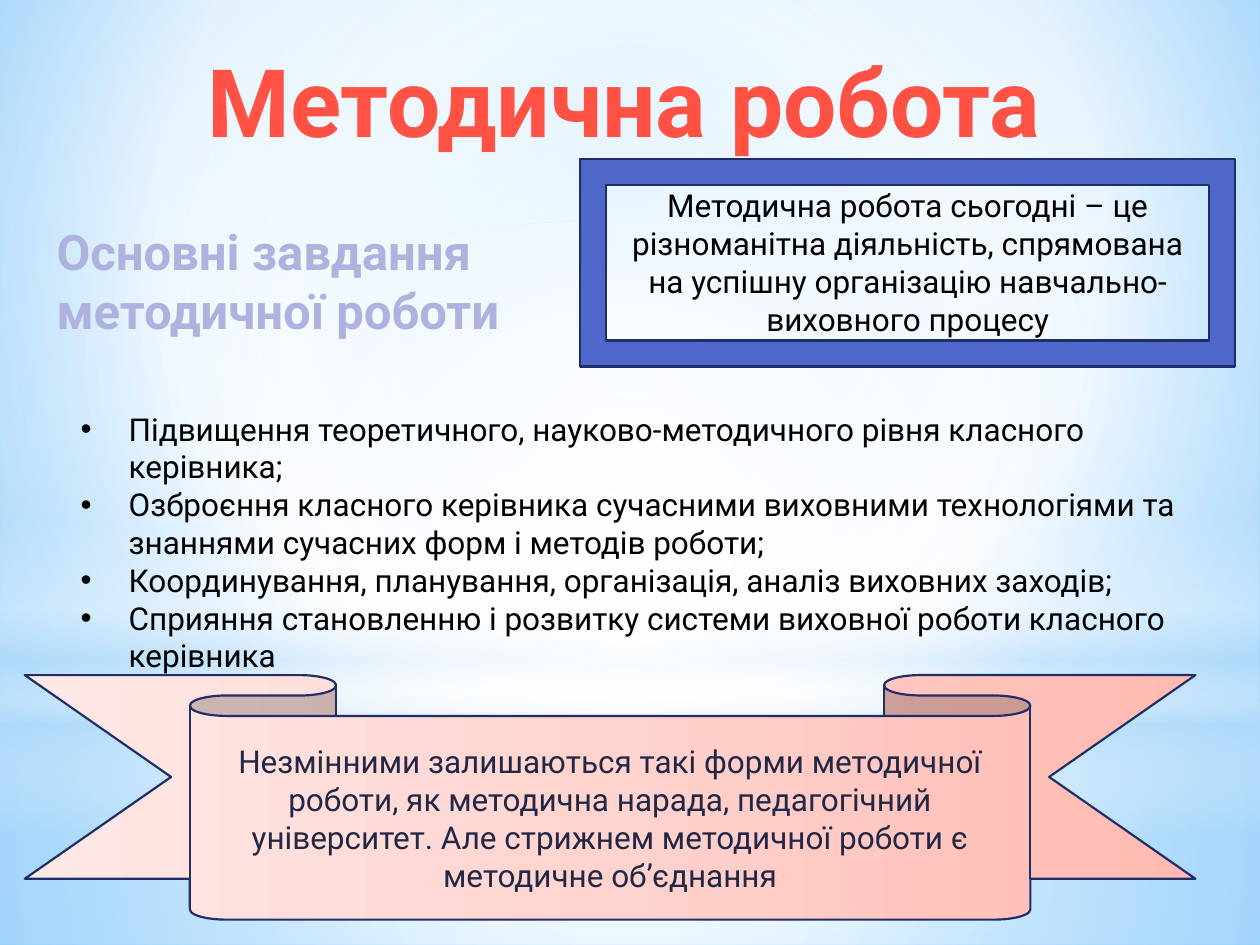
import pptx
import pptx.dml.color
import pptx.enum.shapes
import pptx.enum.text
import pptx.oxml.ns
import pptx.util
from lxml import etree

Cm = pptx.util.Cm
Pt = pptx.util.Pt
SHAPES = pptx.enum.shapes.MSO_SHAPE
ALIGN = pptx.enum.text.PP_ALIGN
ANCHOR = pptx.enum.text.MSO_ANCHOR
qn = pptx.oxml.ns.qn

FONT = "Roboto"
COLORS = {
    "white": "FFFFFF",
    "sky": "9ED5FF",
    "deep_sky": "5BB9FF",
    "haze": "B4DCFA",
    "title": "FF5244",
    "subtitle": "AFB2DF",
    "text": "000000",
    "frame": "4E67C8",
    "outline": "1F2E69",
    "ribbon_dark": "FFBAB1",
    "ribbon_middle": "FFD3CE",
    "ribbon_light": "FFE9E7",
    "ribbon_text": "212745",
}
CENTER = (50, 50, 50, 50)
TASKS = [
    "Підвищення теоретичного, науково-методичного рівня класного керівника;",
    "Озброєння класного керівника сучасними виховними технологіями та знаннями сучасних форм і методів роботи;",
    "Координування, планування, організація, аналіз виховних заходів;",
    "Сприяння становленню і розвитку системи виховної роботи класного керівника",
]


def rgb(name):
    return pptx.dml.color.RGBColor.from_string(COLORS[name])


def fill_gradient(fill, owner, stops, angle=None, focus=None):
    """Fill with (position, colour, opacity) stops, linear or circular around focus."""
    fill.gradient()
    gradient = owner.find(".//" + qn("a:gradFill"))
    for child in list(gradient):
        gradient.remove(child)
    stop_list = etree.SubElement(gradient, qn("a:gsLst"))
    for position, color, opacity in stops:
        stop = etree.SubElement(stop_list, qn("a:gs"), pos=str(position * 1000))
        value = etree.SubElement(stop, qn("a:srgbClr"), val=COLORS[color])
        if opacity < 100:
            etree.SubElement(value, qn("a:alpha"), val=str(opacity * 1000))
    if focus:
        path = etree.SubElement(gradient, qn("a:path"), path="circle")
        sides = {side: str(part * 1000) for side, part in zip("ltrb", focus)}
        etree.SubElement(path, qn("a:fillToRect"), **sides)
    else:
        etree.SubElement(gradient, qn("a:lin"), ang=str(angle * 60000), scaled="0")


def place(shape, box):
    shape.left, shape.top, shape.width, shape.height = (Cm(length) for length in box)


def add_shape(slide, kind, box, outline=None):
    shape = slide.shapes.add_shape(kind, *(Cm(length) for length in box))
    shape.shadow.inherit = False
    if outline:
        shape.line.color.rgb = rgb(outline)
        shape.line.width = Pt(1.25)
    else:
        shape.line.fill.background()
    return shape


def write(shape, lines, size, color, bold=False, align=ALIGN.LEFT,
          anchor=ANCHOR.TOP, wrap=True):
    frame = shape.text_frame
    frame.text = "\n".join(lines)
    frame.auto_size = pptx.enum.text.MSO_AUTO_SIZE.NONE
    frame.word_wrap = wrap
    frame.vertical_anchor = anchor
    for paragraph in frame.paragraphs:
        paragraph.alignment = align
        paragraph.space_before = Pt(0)
        for run in paragraph.runs:
            run.font.name = FONT
            run.font.size = Pt(size)
            run.font.bold = bold
            run.font.color.rgb = rgb(color)


def draw_sky(slide, box):
    left, top, width, height = box
    horizon = 14.17
    fill_gradient(slide.background.fill, slide.element,
                  [(0, "sky", 100), (60, "white", 100), (100, "deep_sky", 100)],
                  focus=(20, 10, 20, 60))
    layers = [
        (SHAPES.RECTANGLE, horizon, height - horizon, {"focus": CENTER},
         [(0, "white", 91), (37, "white", 76), (100, "haze", 79)]),
        (SHAPES.RECTANGLE, 0, horizon, {"focus": CENTER},
         [(0, "white", 89), (48, "white", 62), (100, "haze", 79)]),
        (SHAPES.RECTANGLE, 10.46, 6.35, {"angle": 90},
         [(0, "white", 0), (29, "white", 30), (45, "haze", 40),
          (55, "white", 26), (65, "haze", 60), (100, "white", 0)]),
        (SHAPES.OVAL, 4.45, horizon, {"focus": CENTER},
         [(0, "white", 100), (56, "white", 0)]),
    ]
    for kind, offset, layer_height, direction, stops in layers:
        layer = add_shape(slide, kind, (left, top + offset, width, layer_height))
        fill_gradient(layer.fill, layer.element, stops, **direction)


def fill_title(slide, box):
    title = slide.shapes.title
    place(title, box)
    write(title, ["Методична робота"], 54, "title", bold=True,
          align=ALIGN.CENTER, wrap=False)


def draw_definition(slide, box):
    left, top, width, height = box
    frame = add_shape(slide, SHAPES.FRAME, box, "outline")
    frame.fill.solid()
    frame.fill.fore_color.rgb = rgb("frame")
    inner = (left + 0.6, top + 0.43, width - 1.2, height - 0.86)
    text_box = slide.shapes.add_textbox(*(Cm(length) for length in inner))
    write(text_box, ["Методична робота сьогодні – це різноманітна діяльність, "
                     "спрямована на успішну організацію навчально-виховного процесу"],
          18, "text", align=ALIGN.CENTER)


def draw_subtitle(slide, box):
    text_box = slide.shapes.add_textbox(*(Cm(length) for length in box))
    write(text_box, ["Основні завдання", "методичної роботи"], 28, "subtitle",
          bold=True, wrap=False)


def fill_tasks(slide, box):
    body = slide.placeholders[1]
    place(body, box)
    write(body, TASKS, 18, "text")
    indent = Cm(0.97)
    for paragraph in body.text_frame.paragraphs:
        properties = paragraph._p.get_or_add_pPr()
        properties.set("marL", str(indent))
        properties.set("indent", str(-indent))
        etree.SubElement(properties, qn("a:buFont"), typeface="Arial")
        etree.SubElement(properties, qn("a:buChar"), char="•")


def draw_ribbon(slide, box):
    ribbon = add_shape(slide, SHAPES.DOWN_RIBBON, box, "outline")
    ribbon.adjustments[0] = 0.167
    ribbon.adjustments[1] = 0.718
    fill_gradient(ribbon.fill, ribbon.element,
                  [(0, "ribbon_dark", 100), (50, "ribbon_middle", 100),
                   (100, "ribbon_light", 100)], angle=180)
    write(ribbon, ["Незмінними залишаються такі форми методичної роботи, як методична "
                   "нарада, педагогічний університет. Але стрижнем методичної роботи "
                   "є методичне об’єднання"],
          18, "ribbon_text", align=ALIGN.CENTER, anchor=ANCHOR.MIDDLE)


def main():
    presentation = pptx.Presentation()
    presentation.slide_width = Cm(25.4)
    presentation.slide_height = Cm(19.05)
    slide = presentation.slides.add_slide(presentation.slide_layouts[1])

    draw_sky(slide, (0, 0, 25.4, 19.05))
    for placeholder in list(slide.placeholders):  # bring in front of the sky
        placeholder.element.getparent().append(placeholder.element)
    fill_title(slide, (3.71, 0.74, 17.75, 2.57))
    draw_definition(slide, (11.7, 3.2, 13.2, 4.19))
    draw_subtitle(slide, (0.89, 4.34, 9.8, 2.64))
    fill_tasks(slide, (1.37, 8.13, 23.52, 5.64))
    draw_ribbon(slide, (0.5, 13.61, 23.6, 4.93))

    presentation.save("out.pptx")


if __name__ == "__main__":
    main()
